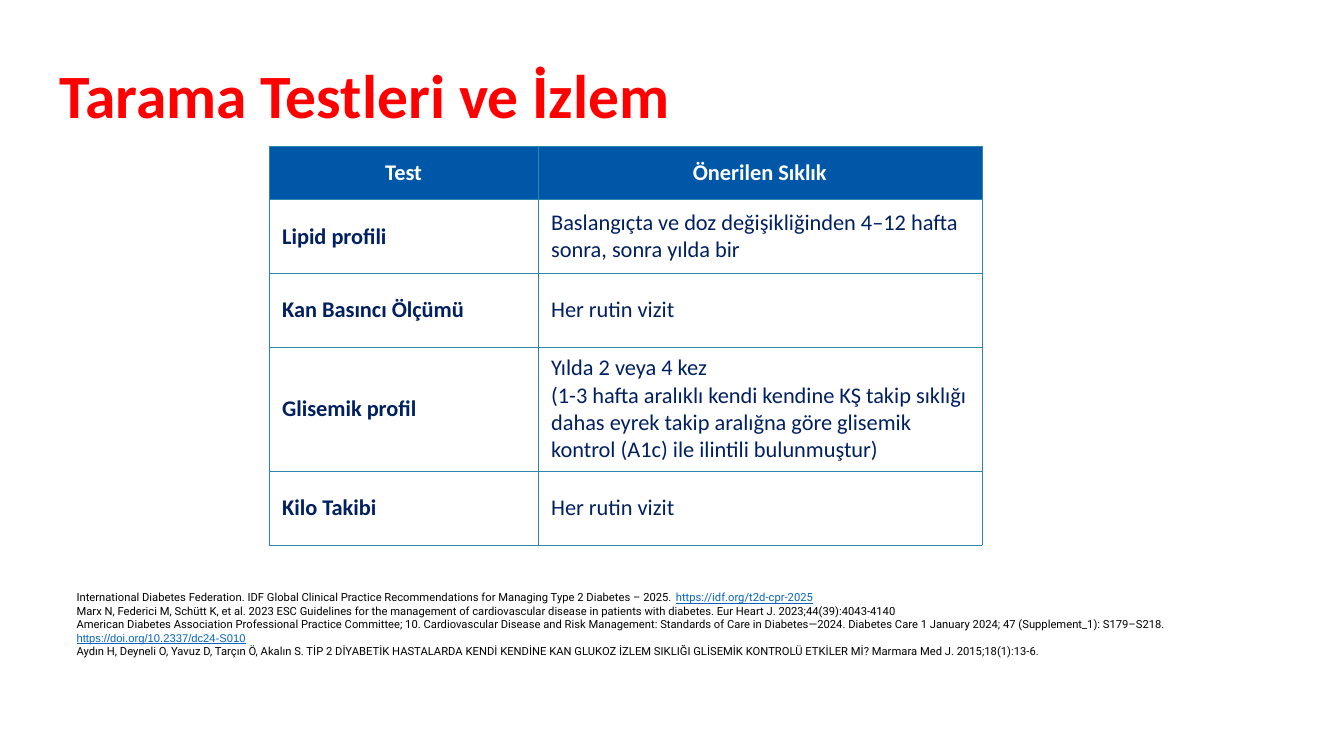
from lxml.etree import SubElement as Sub
from pptx import Presentation
from pptx.dml.color import RGBColor as Rgb
from pptx.enum.text import MSO_ANCHOR as Anchor, MSO_AUTO_SIZE as Auto, PP_ALIGN as Align
from pptx.oxml.ns import qn
from pptx.util import Cm, Pt


def add_run(par, text, color, **look):
    run = par.add_run()
    run.text = text
    run.font.color.rgb = Rgb.from_string(color)
    for key, val in look.items():
        setattr(run.font, key, val)


def add_edge(cell, color):
    props = cell._tc.get_or_add_tcPr()
    for side in ("lnL", "lnR", "lnT", "lnB"):
        line = Sub(props, qn("a:" + side), w=str(Pt(0.3)))
        fill = Sub(line, qn("a:solidFill"))
        Sub(fill, qn("a:srgbClr"), val=color)


RED, WHITE, BLUE, NAVY = "FF0000", "FFFFFF", "0057A7", "002060"
EDGE, BLACK, LINK = "2E86AB", "000000", "0563C1"

deck = Presentation()
deck.slide_width, deck.slide_height = Cm(33.87), Cm(19.05)
slide = deck.slides.add_slide(deck.slide_layouts[5])

title = slide.shapes.title
place = {"left": Cm(1.24), "top": Cm(1.35), "width": Cm(30.48), "height": Cm(2.03)}
for key, val in place.items():
    setattr(title, key, val)
frame = title.text_frame
frame.vertical_anchor = Anchor.MIDDLE
frame.auto_size = Auto.NONE
head = frame.paragraphs[0]
head.alignment = Align.LEFT
add_run(head, "Tarama Testleri ve İzlem", RED, name="Calibri", size=Pt(44), bold=True)

rows = [
    ("Test", "Önerilen Sıklık"),
    ("Lipid profili", "Baslangıçta ve doz değişikliğinden 4–12 hafta sonra, sonra yılda bir"),
    ("Kan Basıncı Ölçümü", "Her rutin vizit"),
    ("Glisemik profil", "Yılda 2 veya 4 kez\n(1-3 hafta aralıklı kendi kendine KŞ takip sıklığı "
     "dahas eyrek takip aralığna göre glisemik kontrol (A1c) ile ilintili bulunmuştur)"),
    ("Kilo Takibi", "Her rutin vizit"),
]
tall = [1.35, 1.86, 1.86, 3.07, 1.86]
wide = [6.78, 11.18]
table = slide.shapes.add_table(len(rows), len(wide), Cm(6.78), Cm(3.68),
                               Cm(sum(wide)), Cm(sum(tall))).table
table.first_row = table.horz_banding = False
for col, size in zip(table.columns, wide):
    col.width = Cm(size)
pad = {"margin_left": Cm(0.33), "margin_right": Cm(0.33), "margin_top": Cm(0.18),
       "margin_bottom": Cm(0.18), "vertical_anchor": Anchor.MIDDLE}
for r, texts in enumerate(rows):
    table.rows[r].height = Cm(tall[r])
    for c, text in enumerate(texts):
        cell = table.cell(r, c)
        for key, val in pad.items():
            setattr(cell, key, val)
        add_edge(cell, EDGE)
        if r == 0:
            cell.fill.solid()
            cell.fill.fore_color.rgb = Rgb.from_string(BLUE)
        else:
            cell.fill.background()
        for i, part in enumerate(text.split("\n")):
            par = cell.text_frame.add_paragraph() if i else cell.text_frame.paragraphs[0]
            par.alignment = Align.LEFT if r else Align.CENTER
            add_run(par, part, NAVY if r else WHITE, name="Calibri", size=Pt(16),
                    bold=r == 0 or c == 0)

refs = [
    ("International Diabetes Federation. IDF Global Clinical Practice Recommendations for "
     "Managing Type 2 Diabetes – 2025. ", "https://idf.org/t2d-cpr-2025", "Roboto"),
    ("Marx N, Federici M, Schütt K, et al. 2023 ESC Guidelines for the management of "
     "cardiovascular disease in patients with diabetes. Eur Heart J. 2023;44(39):4043-4140", "", ""),
    ("American Diabetes Association Professional Practice Committee; 10. Cardiovascular Disease "
     "and Risk Management: Standards of Care in Diabetes—2024. Diabetes Care 1 January 2024; "
     "47 (Supplement_1): S179–S218. ", "https://doi.org/10.2337/dc24-S010", "Arial"),
    ("Aydın H, Deyneli O, Yavuz D, Tarçın Ö, Akalın S. TİP 2 DİYABETİK HASTALARDA KENDİ KENDİNE "
     "KAN GLUKOZ İZLEM SIKLIĞI GLİSEMİK KONTROLÜ ETKİLER Mİ? Marmara Med J. 2015;18(1):13-6.", "", ""),
]
notes = slide.shapes.add_textbox(Cm(1.68), Cm(14.76), Cm(30.48), Cm(1.63)).text_frame
notes.word_wrap = True
notes.auto_size = Auto.SHAPE_TO_FIT_TEXT
for i, (text, link, font) in enumerate(refs):
    par = notes.add_paragraph() if i else notes.paragraphs[0]
    add_run(par, text, BLACK, name="Roboto", size=Pt(8))
    if link:
        add_run(par, link, LINK, name=font, size=Pt(8), underline=True)

deck.save("out.pptx")
